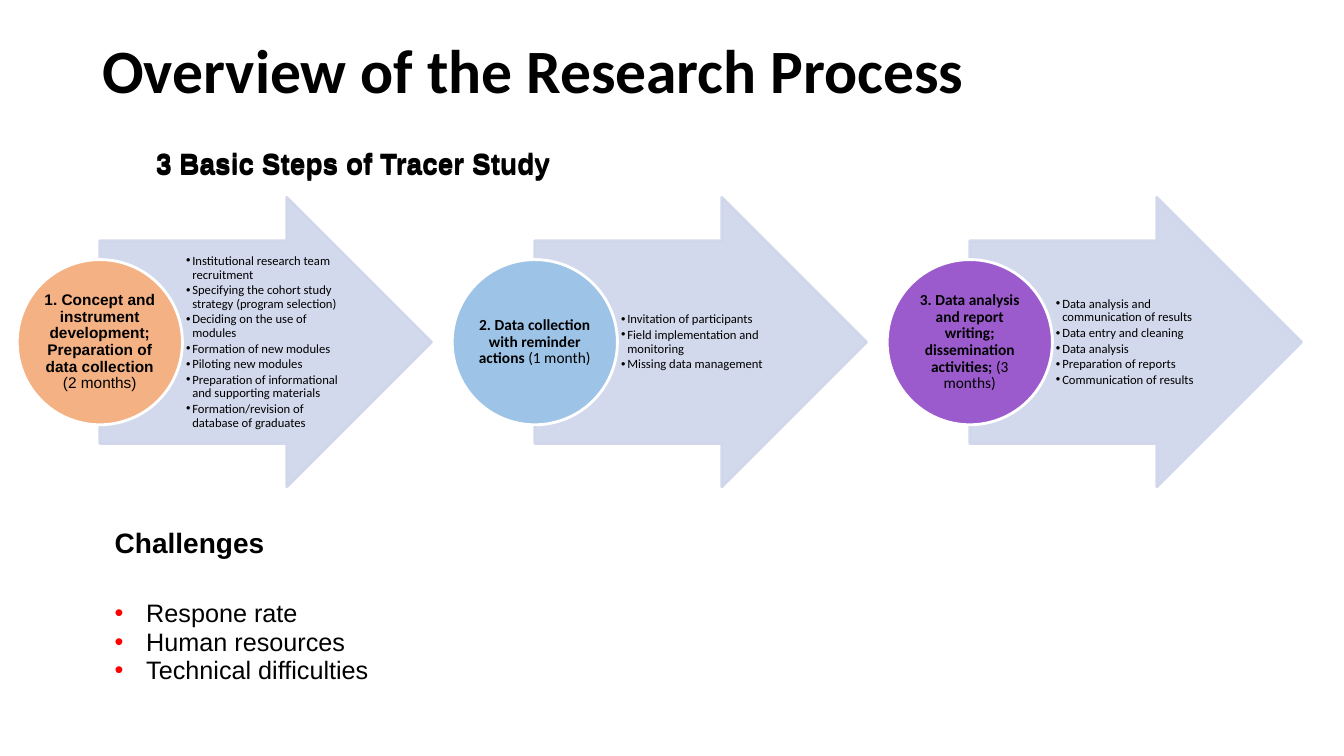
"""Build the slide on the research process of a tracer study."""
import pptx
import pptx.dml.color
import pptx.enum.shapes
import pptx.enum.text
import pptx.oxml
import pptx.oxml.ns
import pptx.util

Pt = pptx.util.Pt
RGBColor = pptx.dml.color.RGBColor
Shape = pptx.enum.shapes.MSO_SHAPE
Anchor = pptx.enum.text.MSO_ANCHOR
Align = pptx.enum.text.PP_ALIGN

BLACK = RGBColor(0x00, 0x00, 0x00)
WHITE = RGBColor(0xFF, 0xFF, 0xFF)
RED = RGBColor(0xFF, 0x00, 0x00)
PALE_BLUE = RGBColor(0xCF, 0xD5, 0xEA)
ORANGE = RGBColor(0xF4, 0xB1, 0x83)
SKY_BLUE = RGBColor(0x9D, 0xC3, 0xE6)
PURPLE = RGBColor(0x9C, 0x5B, 0xCD)

TITLE = "Overview of the Research Process"
STEPS_HEADING = "3 Basic Steps of Tracer Study"
STEPS = [
    ("1. Concept and instrument development; Preparation of data collection ", "(2 months)",
     "Arial", ORANGE,
     ["Institutional research team recruitment",
      "Specifying the cohort study strategy (program selection)",
      "Deciding on the use of modules",
      "Formation of new modules",
      "Piloting new modules",
      "Preparation of informational and supporting materials",
      "Formation/revision of database of graduates"]),
    ("2. Data collection with reminder actions ", "(1 month)", "Calibri", SKY_BLUE,
     ["Invitation of participants",
      "Field implementation and monitoring",
      "Missing data management"]),
    ("3. Data analysis and report writing; dissemination activities; ", "(3 months)",
     "Calibri", PURPLE,
     ["Data analysis and communication of results",
      "Data entry and cleaning",
      "Data analysis",
      "Preparation of reports",
      "Communication of results"]),
]
CHALLENGES_HEADING = "Challenges"
CHALLENGES = ["Respone rate", "Human resources", "Technical difficulties"]

ARROW_LEFT, ARROW_TOP, ARROW_WIDTH, ARROW_HEIGHT = 71.3, 141, 237, 206.8
STEP_PITCH = 310.7
SHAFT = 0.7
CIRCLE = 118
LIST_OFFSET, LIST_WIDTH = 59.6, 115.2
DEFAULT_INSETS = (7.2, 3.6, 7.2, 3.6)


def set_frame(frame, insets, anchor):
    frame.word_wrap = True
    frame.vertical_anchor = anchor
    frame.margin_left, frame.margin_top, frame.margin_right, frame.margin_bottom = map(Pt, insets)


def set_font(para, size, name, bold=False):
    para.line_spacing = 0.9
    para.font.size = Pt(size)
    para.font.name = name
    para.font.bold = bold
    para.font.color.rgb = BLACK


def add_bullet(para, color, indent):
    properties = para._p.get_or_add_pPr()
    properties.set("marL", str(Pt(indent)))
    properties.set("indent", str(-Pt(indent)))
    namespace = pptx.oxml.ns.nsdecls("a")
    for markup in (f'<a:buClr {namespace}><a:srgbClr val="{color}"/></a:buClr>',
                   f'<a:buFont {namespace} typeface="Arial"/>',
                   f'<a:buChar {namespace} char="•"/>'):
        properties.append(pptx.oxml.parse_xml(markup))


def add_text(page, place, lines, size, name, bold=False, insets=DEFAULT_INSETS,
             anchor=Anchor.TOP, bullet=None, indent=0, gap=0):
    frame = page.shapes.add_textbox(*map(Pt, place)).text_frame
    set_frame(frame, insets, anchor)
    for index, line in enumerate(lines):
        para = frame.add_paragraph() if index else frame.paragraphs[0]
        para.text = line
        para.space_after = Pt(gap)
        if bullet is not None:
            add_bullet(para, bullet, indent)
        set_font(para, size, name, bold)


def add_figure(page, kind, place, fill, line):
    figure = page.shapes.add_shape(kind, *map(Pt, place))
    figure.shadow.inherit = False
    figure.fill.solid()
    figure.fill.fore_color.rgb = fill
    figure.line.color.rgb = line
    figure.line.width = Pt(2)
    return figure


def add_step(page, left, step):
    label, duration, font_name, color, tasks = step
    arrow = add_figure(page, Shape.RIGHT_ARROW, (left, ARROW_TOP, ARROW_WIDTH, ARROW_HEIGHT),
                       PALE_BLUE, PALE_BLUE)
    arrow.adjustments[0] = SHAFT
    arrow.adjustments[1] = 0.5
    for tint in arrow._element.spPr.iter(pptx.oxml.ns.qn("a:srgbClr")):
        tint.append(pptx.oxml.parse_xml(
            f'<a:alpha {pptx.oxml.ns.nsdecls("a")} val="90000"/>'))

    middle = ARROW_TOP + ARROW_HEIGHT / 2
    list_height = ARROW_HEIGHT * SHAFT
    add_text(page, (left + LIST_OFFSET, middle - list_height / 2, LIST_WIDTH, list_height),
             tasks, 9, "Calibri", insets=(2, 0.5, 0.5, 0.5), anchor=Anchor.MIDDLE,
             bullet=BLACK, indent=4.5, gap=1.35)

    circle = add_figure(page, Shape.OVAL,
                        (left - CIRCLE / 2, middle - CIRCLE / 2, CIRCLE, CIRCLE), color, WHITE)
    set_frame(circle.text_frame, (0.7, 0.7, 0.7, 0.7), Anchor.MIDDLE)
    para = circle.text_frame.paragraphs[0]
    para.alignment = Align.CENTER
    set_font(para, 11, font_name)
    for words, bold in ((label, True), (duration, False)):
        span = para.add_run()
        span.text = words
        span.font.bold = bold


def main():
    deck = pptx.Presentation()
    deck.slide_width, deck.slide_height = Pt(960), Pt(540)
    page = deck.slides.add_slide(deck.slide_layouts[6])

    add_text(page, (66, 0, 828, 104.4), [TITLE], 44, "Calibri", bold=True, anchor=Anchor.MIDDLE)
    for index, step in enumerate(STEPS):
        add_step(page, ARROW_LEFT + index * STEP_PITCH, step)
    for top in (103, 104.4):
        add_text(page, (104.4, top, 479.5, 61.2), [STEPS_HEADING], 20, "Arial", bold=True)
    add_text(page, (74.9, 374.4, 479.5, 28.8), [CHALLENGES_HEADING], 20, "Arial", bold=True)
    add_text(page, (74.9, 425.5, 479.5, 66.2), CHALLENGES, 18, "Arial",
             bullet=RED, indent=22.5, gap=1)
    deck.save("out.pptx")


if __name__ == "__main__":
    main()
